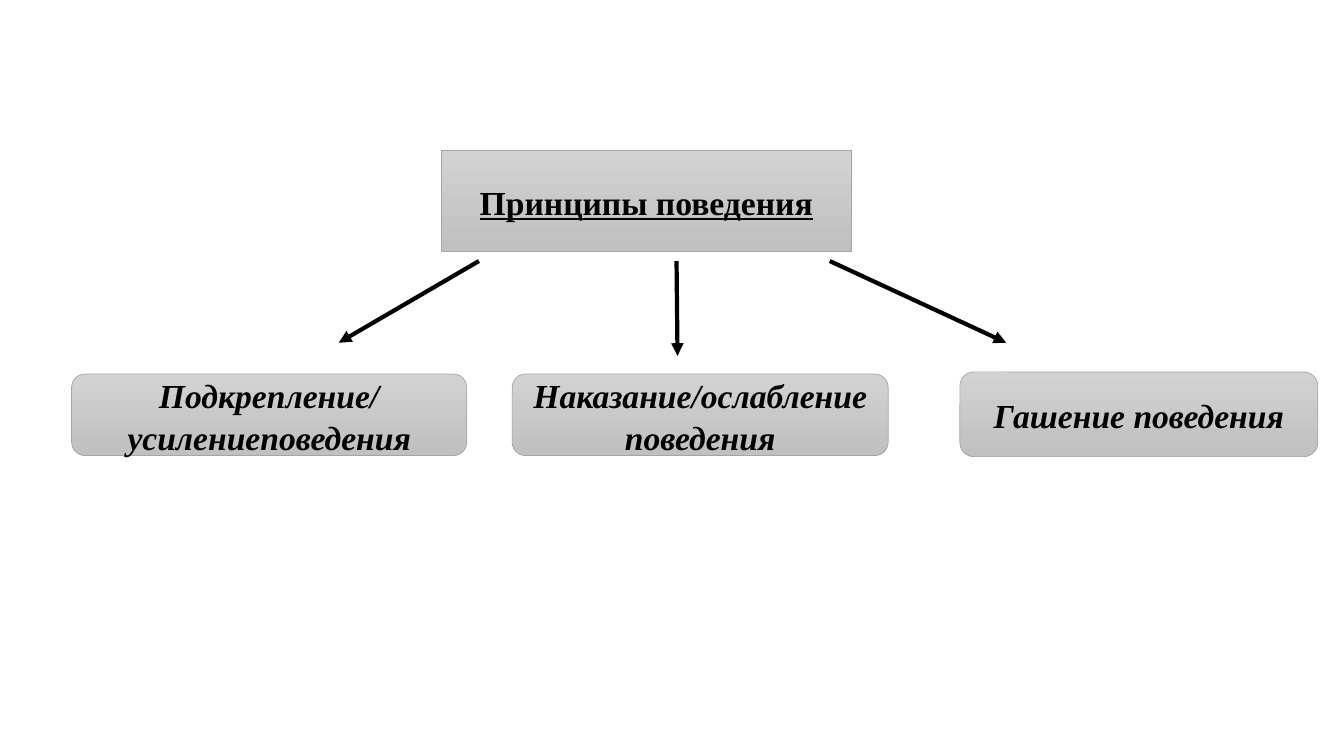
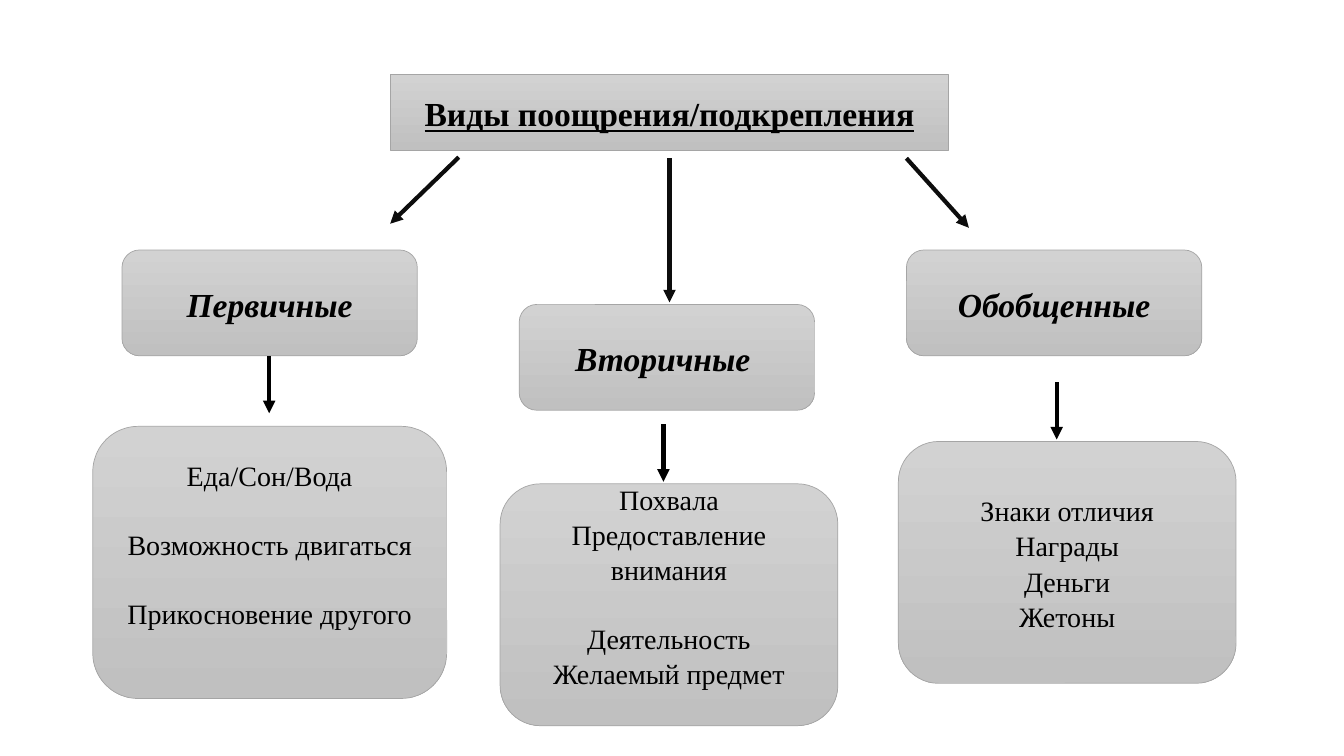
from lxml.etree import SubElement
from pptx import Presentation
from pptx.dml.color import RGBColor
from pptx.enum.shapes import MSO_CONNECTOR, MSO_SHAPE
from pptx.enum.text import MSO_ANCHOR, MSO_AUTO_SIZE, PP_ALIGN
from pptx.oxml import parse_xml
from pptx.oxml.ns import nsdecls, qn
from pptx.util import Inches, Pt

BLACK = RGBColor(0x00, 0x00, 0x00)
SOFT_BLACK = RGBColor(0x0D, 0x0D, 0x0D)
BORDER = RGBColor(0xA5, 0xA5, 0xA5)
GRADIENT = (RGBColor(0xD2, 0xD2, 0xD2), RGBColor(0xC0, 0xC0, 0xC0))

TITLE = dict(size=Pt(24), bold=True, underline=True)
KIND = dict(size=Pt(24), bold=True, italic=True)
BODY = dict(size=Pt(20), bold=False)
LINE_SPACING = 1.05
BLANK = 24   # one empty body line, points
INSET = 0.05

# Boxes are (left, top, width, height); arrows are (x1, y1, x2, y2); all in inches.
PRINCIPLES = dict(
    title="Принципы поведения",
    box=(4.38, 1.49, 4.06, 1),
    arrows=[(4.75, 2.59, 3.36, 3.4), (6.71, 2.59, 6.72, 3.53), (8.23, 2.59, 9.98, 3.4)],
    arrow_color=BLACK,
    kinds=[
        ("Подкрепление/усилениеповедения", (0.71, 3.71, 3.92, 0.81)),
        ("Наказание/ослабление поведения", (5.08, 3.71, 3.73, 0.81)),
        ("Гашение поведения", (9.52, 3.69, 3.55, 0.84)),
    ],
)

KIND_W, KIND_H = 2.93, 1.05
REWARDS = dict(
    title="Виды поощрения/подкрепления",
    box=(3.87, 0.74, 5.54, 0.75),
    arrows=[(4.55, 1.56, 3.87, 2.22), (6.64, 1.57, 6.64, 3), (8.99, 1.57, 9.61, 2.26)],
    arrow_color=SOFT_BLACK,
    kinds=[
        ("Первичные", (1.21, 2.48, KIND_W, KIND_H)),
        ("Вторичные ", (5.15, 3.02, KIND_W, KIND_H)),
        ("Обобщенные", (8.99, 2.48, KIND_W, KIND_H)),
    ],
)

# Example boxes: lines as (text, gap before in points), box, extra room below the text.
EXAMPLES = [
    ([("Еда/Сон/Вода", 0), ("Возможность двигаться", BLANK),
      ("Прикосновение другого", BLANK)], (0.92, 4.23, 3.51, 2.7), 0.38),
    ([("Похвала", 0), ("Предоставление внимания", 0), ("Деятельность", BLANK),
      ("Желаемый предмет", 0)], (4.96, 4.8, 3.35, 2.4), 0.38),
    ([("Знаки отличия", 0), ("Награды", 0), ("Деньги", 0), ("Жетоны", 0)],
     (8.91, 4.38, 3.35, 2.4), 0),
]
EXAMPLE_ARROWS = [(2.67, 3.53), (6.58, 4.21), (10.48, 3.79)]
EXAMPLE_ARROW_LENGTH = 0.57


def style_box(sp, lines, font, room_below=0):
    sp.shadow.inherit = False
    sp.fill.gradient()
    sp.fill.gradient_angle = 270
    for stop, color in zip(sp.fill.gradient_stops, GRADIENT):
        stop.color.rgb = color
    sp.line.color.rgb = BORDER
    sp.line.width = Pt(0.5)

    tf = sp.text_frame
    tf.word_wrap = True
    tf.auto_size = MSO_AUTO_SIZE.NONE
    tf.vertical_anchor = MSO_ANCHOR.MIDDLE
    tf.margin_bottom = Inches(INSET + room_below)
    for i, (text, gap) in enumerate(lines):
        p = tf.add_paragraph() if i else tf.paragraphs[0]
        p.alignment = PP_ALIGN.CENTER
        p.line_spacing = LINE_SPACING
        p.space_before = Pt(gap)
        r = p.add_run()
        r.text = text
        r.font.name = "Times New Roman"
        r.font.color.rgb = BLACK
        for name, value in font.items():
            setattr(r.font, name, value)


def add_box(s, box, lines, font, room_below=0):
    sp = s.shapes.add_shape(MSO_SHAPE.ROUNDED_RECTANGLE, *map(Inches, box))
    style_box(sp, lines, font, room_below)


def add_title(s, text, box):
    """Turn the title placeholder into a rounded box."""
    sp = s.shapes.title
    sp.left, sp.top, sp.width, sp.height = map(Inches, box)
    sp._element.spPr.find(qn("a:xfrm")).addnext(parse_xml(
        f'<a:prstGeom {nsdecls("a")} prst="roundRect"><a:avLst/></a:prstGeom>'))
    style_box(sp, [(text, 0)], TITLE)


def add_arrow(s, ends, color):
    c = s.shapes.add_connector(MSO_CONNECTOR.STRAIGHT, *map(Inches, ends))
    c.line.color.rgb = color
    c.line.width = Pt(3)
    SubElement(c.line._get_or_add_ln(), qn("a:tailEnd"), type="triangle")
    SubElement(c._element.spPr, qn("a:effectLst"))


def add_scheme(prs, scheme):
    """Add a slide with a title box and arrows to the boxes of its kinds."""
    s = prs.slides.add_slide(prs.slide_layouts[5])
    add_title(s, scheme["title"], scheme["box"])
    for ends in scheme["arrows"]:
        add_arrow(s, ends, scheme["arrow_color"])
    for text, box in scheme["kinds"]:
        add_box(s, box, [(text, 0)], KIND)
    return s


def main():
    prs = Presentation()
    prs.slide_width, prs.slide_height = Inches(13.33), Inches(7.5)
    add_scheme(prs, PRINCIPLES)
    s = add_scheme(prs, REWARDS)
    for x, y in EXAMPLE_ARROWS:
        add_arrow(s, (x, y, x, y + EXAMPLE_ARROW_LENGTH), BLACK)
    for lines, box, room_below in EXAMPLES:
        add_box(s, box, lines, BODY, room_below)
    prs.save("out.pptx")


if __name__ == "__main__":
    main()
